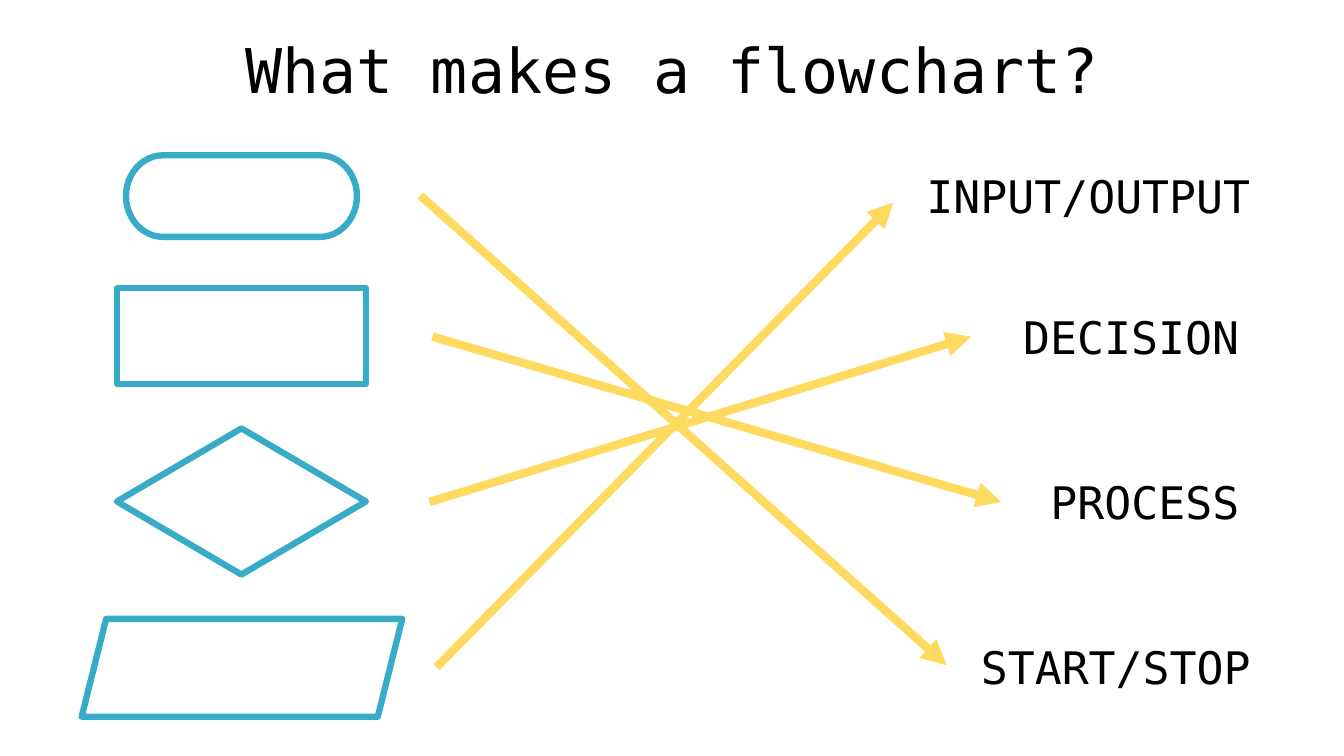
from lxml import etree
from pptx import Presentation
from pptx.dml.color import RGBColor
from pptx.enum.shapes import MSO_CONNECTOR, MSO_SHAPE
from pptx.enum.text import MSO_ANCHOR, MSO_AUTO_SIZE, PP_ALIGN
from pptx.oxml.ns import qn
from pptx.util import Inches, Pt

STRAIGHT = MSO_CONNECTOR.STRAIGHT
TERMINATOR = MSO_SHAPE.FLOWCHART_TERMINATOR
PROCESS = MSO_SHAPE.FLOWCHART_PROCESS
DECISION = MSO_SHAPE.FLOWCHART_DECISION
PARALLELOGRAM = MSO_SHAPE.PARALLELOGRAM
FONT = "DejaVu Sans Mono"
COLORS = {"text": "000000", "outline": "37ABC8", "arrow": "FFDA61"}


def rgb(name):
    return RGBColor.from_string(COLORS[name])


def add_text(p, text, size):
    r = p.add_run()
    r.text = text
    r.font.name = FONT
    r.font.size = Pt(size)
    r.font.color.rgb = rgb("text")


prs = Presentation()
prs.slide_width = Inches(13.33)
prs.slide_height = Inches(7.5)
s = prs.slides.add_slide(prs.slide_layouts[5])

# Title
title = s.shapes.title
title.left, title.top = Inches(0.92), Inches(0)
title.width, title.height = Inches(11.5), Inches(1.45)
tf = title.text_frame
tf.vertical_anchor = MSO_ANCHOR.MIDDLE
p = tf.paragraphs[0]
p.alignment = PP_ALIGN.CENTER
p.line_spacing = 0.9
add_text(p, "What makes a flowchart?", 44)

# Flowchart symbols
symbols = [
    (TERMINATOR, 1.25, 1.54, 2.29, 0.81),
    (PROCESS, 1.16, 2.86, 2.47, 0.95),
    (DECISION, 1.16, 4.25, 2.47, 1.45),
    (PARALLELOGRAM, 0.81, 6.14, 3.18, 0.97),
]
for kind, x, y, w, h in symbols:
    sp = s.shapes.add_shape(kind, Inches(x), Inches(y), Inches(w), Inches(h))
    sp.shadow.inherit = False
    sp.fill.background()
    sp.line.color.rgb = rgb("outline")
    sp.line.width = Pt(4.5)

# Meanings
meanings = [
    ("INPUT/OUTPUT", 9.09, 1.62, 3.44),
    ("DECISION", 10.05, 3.02, 2.36),
    ("PROCESS", 10.32, 4.66, 2.09),
    ("START/STOP", 9.63, 6.3, 2.9),
]
for text, x, y, w in meanings:
    tb = s.shapes.add_textbox(Inches(x), Inches(y), Inches(w), Inches(0.64))
    tf = tb.text_frame
    tf.word_wrap = False
    tf.auto_size = MSO_AUTO_SIZE.SHAPE_TO_FIT_TEXT
    add_text(tf.paragraphs[0], text, 32)

# Arrows from each symbol to its meaning
arrows = [
    (4.17, 1.94, 9.39, 6.6),
    (4.29, 3.34, 9.93, 4.98),
    (4.26, 4.98, 9.63, 3.34),
    (4.33, 6.62, 8.86, 2.01),
]
for x1, y1, x2, y2 in arrows:
    cx = s.shapes.add_connector(
        STRAIGHT, Inches(x1), Inches(y1), Inches(x2), Inches(y2))
    cx.line.color.rgb = rgb("arrow")
    cx.line.width = Pt(6)
    spPr = cx._element.spPr
    etree.SubElement(spPr.find(qn("a:ln")), qn("a:tailEnd"), type="triangle")
    etree.SubElement(spPr, qn("a:effectLst"))

prs.save("out.pptx")
